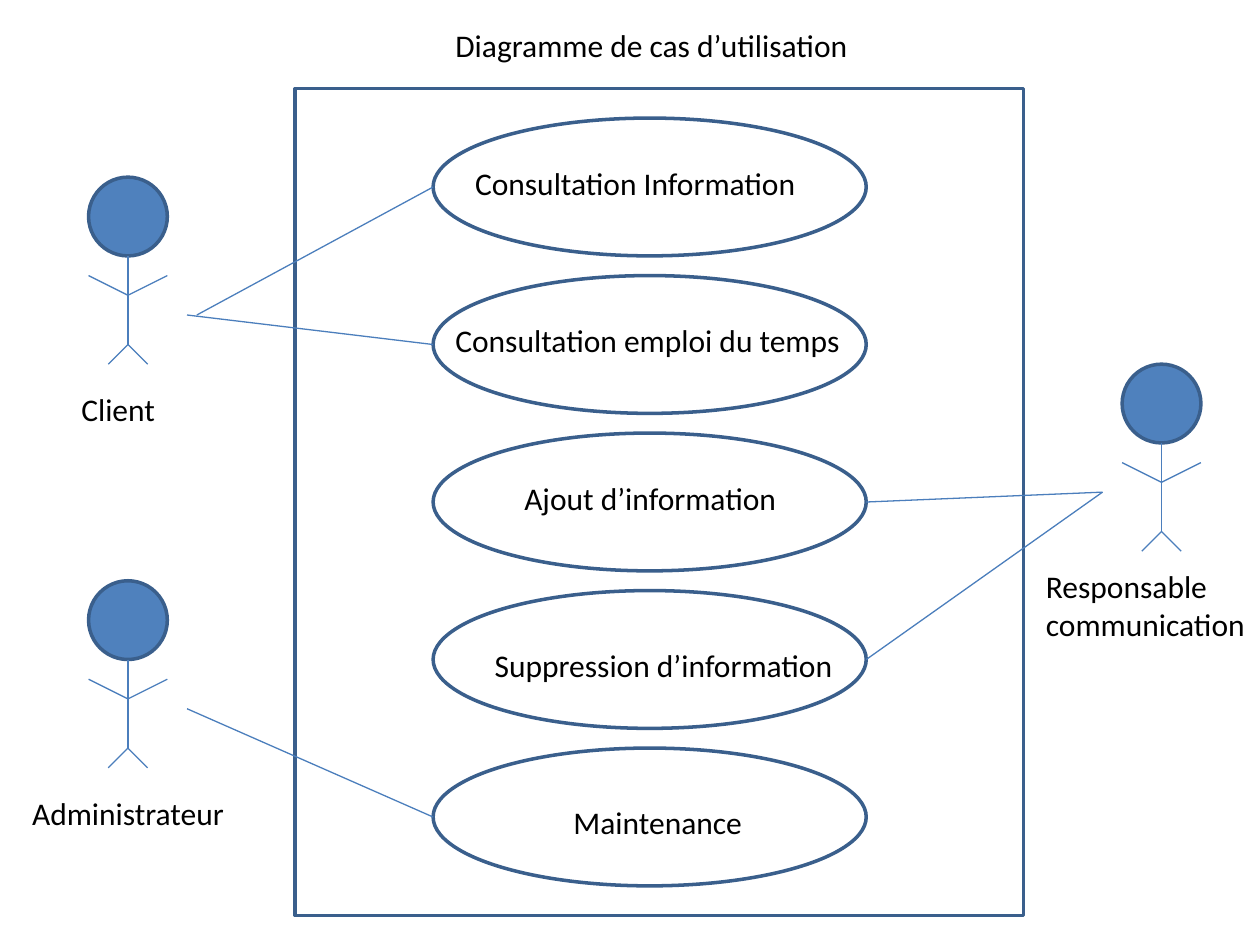
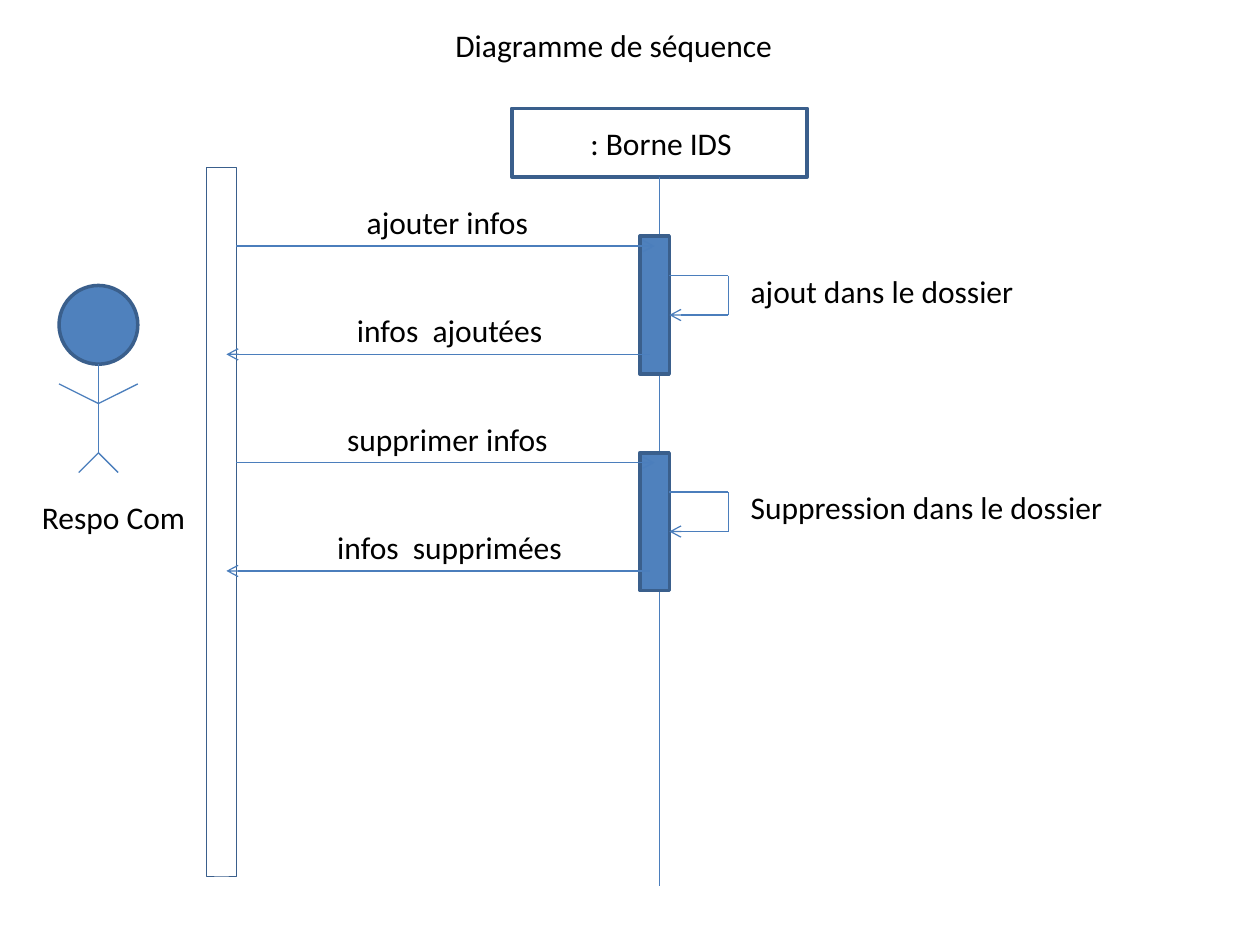
from lxml import etree
from pptx import Presentation, util as u
from pptx.dml.color import RGBColor
from pptx.enum import shapes, text
from pptx.oxml.ns import qn

COLUMNS, ROWS = 128, 96
FILL, OUTLINE, LINK, INK = "4F81BD", "3A5F8C", "4B7EBC", "000000"


def color(value):
    return RGBColor.from_string(value)


class Diagram:
    """Draws UML elements on the current slide; lengths are grid columns and rows."""

    def __init__(self, presentation):
        self.presentation = presentation
        self.cell_width = presentation.slide_width / COLUMNS
        self.cell_height = presentation.slide_height / ROWS
        self.slide = None

    def new_slide(self, title, title_width):
        self.slide = self.presentation.slides.add_slide(self.presentation.slide_layouts[6])
        self.label(title, 45, 2, title_width)

    def place(self, *lengths):
        """Turn alternating columns and rows into slide lengths."""
        sizes = (self.cell_width, self.cell_height) * 2
        return [u.Emu(round(length * size)) for length, size in zip(lengths, sizes)]

    def shape(self, kind, left, top, width, height, fill=None, weight=2):
        shape = self.slide.shapes.add_shape(kind, *self.place(left, top, width, height))
        shape.shadow.inherit = False
        if fill:
            shape.fill.solid()
            shape.fill.fore_color.rgb = color(fill)
        else:
            shape.fill.background()
        shape.line.color.rgb = color(OUTLINE)
        shape.line.width = u.Pt(weight)
        return shape

    def rectangle(self, *area, **style):
        return self.shape(shapes.MSO_SHAPE.RECTANGLE, *area, **style)

    def ellipse(self, *area, **style):
        return self.shape(shapes.MSO_SHAPE.OVAL, *area, **style)

    def line(self, start, end, arrow=False):
        connector = self.slide.shapes.add_connector(
            shapes.MSO_CONNECTOR.STRAIGHT, *self.place(*start, *end))
        connector.line.color.rgb = color(LINK)
        connector.line.width = u.Pt(0.75)
        properties = connector._element.spPr
        if arrow:
            outline = properties.find(qn("a:ln"))
            etree.SubElement(outline, qn("a:tailEnd"), type="arrow")
        etree.SubElement(properties, qn("a:effectLst"))
        return connector

    def label(self, words, left, top, width, height=5):
        box = self.slide.shapes.add_textbox(*self.place(left, top, width, height))
        frame = box.text_frame
        frame.word_wrap = True
        frame.auto_size = text.MSO_AUTO_SIZE.SHAPE_TO_FIT_TEXT
        run = frame.paragraphs[0].add_run()
        run.text = words
        run.font.name = "Calibri"
        run.font.size = u.Pt(18)
        run.font.color.rgb = color(INK)

    def actor(self, left, top):
        """Draw a stick figure whose head starts at the given cell."""
        middle, shoulder, hip = left + 4, top + 12, top + 17
        self.ellipse(left, top, 8, 8, fill=FILL)
        self.line((middle, top + 8), (middle, hip))
        for side in (-1, 1):
            self.line((middle, shoulder), (middle + 4 * side, shoulder - 2))
            self.line((middle, hip), (middle + 2 * side, hip + 2))

    def exchange(self, top, call, reply, action):
        """Draw an activation bar with its call, its self-call and its reply."""
        self.rectangle(65, top, 3, 14, fill=FILL)
        loop = [(68, top + 4), (74, top + 4), (74, top + 8), (68, top + 8)]
        for start, end in zip(loop, loop[1:]):
            self.line(start, end, arrow=end == loop[-1])
        self.line((24, top + 1), (66.5, top + 1), arrow=True)
        self.line((66, top + 12), (23, top + 12), arrow=True)
        for (words, left, width), offset in ((call, -4), (reply, 7), (action, 3)):
            self.label(words, left, top + offset, width)


def draw_use_cases(diagram):
    diagram.new_slide("Diagramme de cas d’utilisation", 44)
    diagram.rectangle(30, 9, 74, 84)
    use_cases = [
        ("Consultation Information", 47, 16, 36),
        ("Consultation emploi du temps", 45, 32, 42),
        ("Ajout d’information", 52, 48, 29),
        ("Suppression d’information", 49, 65, 37),
        ("Maintenance", 57, 81, 20),
    ]
    left, width, height, pitch = 44, 44, 14, 16
    for index, use_case in enumerate(use_cases):
        diagram.label(*use_case)
        diagram.ellipse(left, 12 + pitch * index, width, height)

    for head in ((9, 18), (9, 59), (114, 37)):
        diagram.actor(*head)
    diagram.label("Client", 7, 39, 11)
    diagram.label("Administrateur", 2, 80, 23)
    diagram.label("Responsable communication", 105, 57, 23, 9)

    right = left + width
    links = [((20, 32), left, 0), ((19, 32), left, 1), ((112, 50), right, 2),
             ((112, 50), right, 3), ((19, 72), left, 4)]
    for start, side, index in links:
        diagram.line(start, (side, 19 + pitch * index))


def draw_sequence(diagram):
    diagram.new_slide("Diagramme de séquence", 35)
    participant = diagram.rectangle(52, 11, 30, 7)
    diagram.label(" : Borne IDS", 58, 12, 18)
    lifeline = diagram.line((67, 18), (67, 90))
    lifeline.begin_connect(participant, 2)

    diagram.actor(6, 29)
    diagram.label("Respo Com", 3, 50, 18)
    diagram.rectangle(21, 17, 3, 72, weight=0.5)

    diagram.exchange(24, ("ajouter infos", 36, 19), ("infos  ajoutées", 35, 24),
                     ("ajout dans le dossier", 75, 31))
    diagram.exchange(46, ("supprimer infos", 34, 25), ("infos  supprimées", 33, 26),
                     ("Suppression dans le dossier", 75, 40))


def main():
    presentation = Presentation()
    presentation.slide_width = u.Inches(10)
    presentation.slide_height = u.Inches(7.5)
    diagram = Diagram(presentation)
    draw_use_cases(diagram)
    draw_sequence(diagram)
    presentation.save("out.pptx")


if __name__ == "__main__":
    main()
